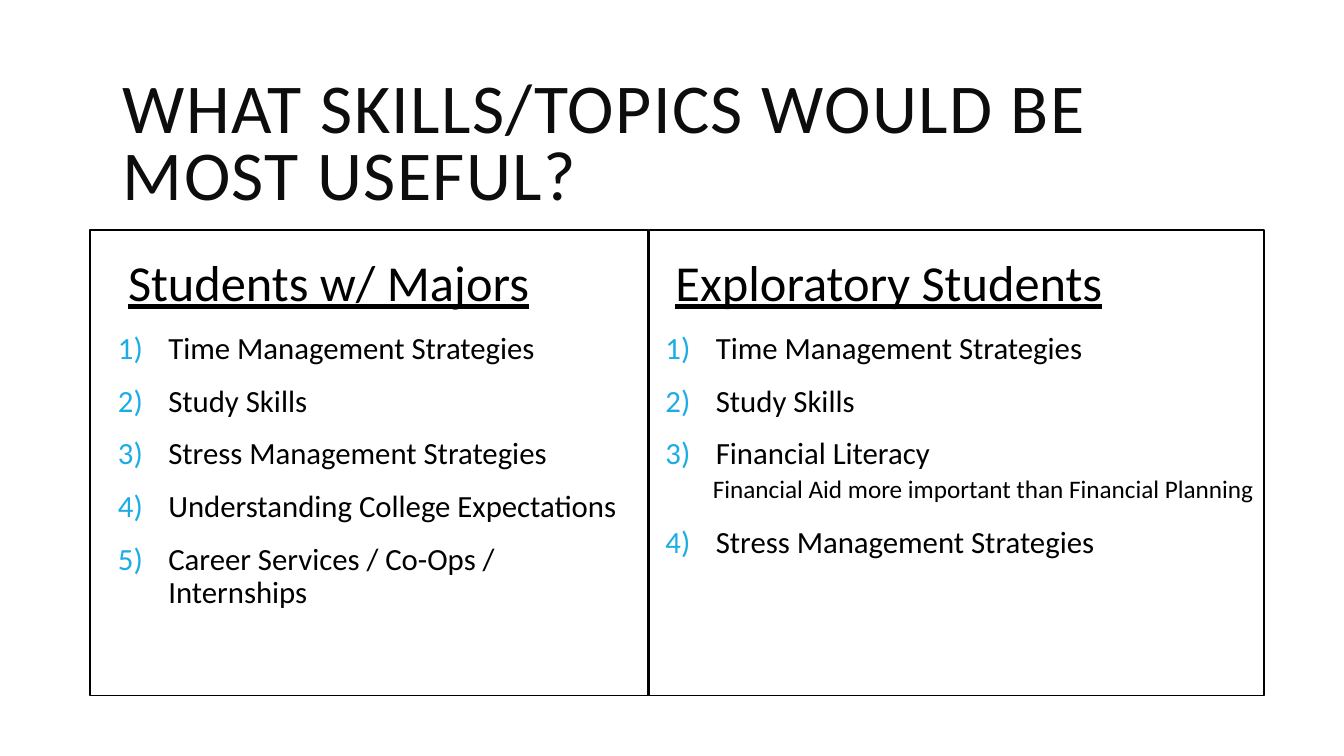
from dataclasses import dataclass

from lxml import etree
from pptx import Presentation
from pptx.dml.color import RGBColor
from pptx.enum.shapes import MSO_SHAPE
from pptx.enum.text import MSO_ANCHOR
from pptx.oxml.ns import qn
from pptx.slide import Slide
from pptx.text.text import TextFrame, _Paragraph
from pptx.util import Inches, Pt

RECTANGLE = MSO_SHAPE.RECTANGLE
MIDDLE = MSO_ANCHOR.MIDDLE
TOP = MSO_ANCHOR.TOP

COLORS = {"title": "0D0D0D", "text": "000000", "number": "1CADE4", "frame": "000000"}
FONT = "Calibri"
BLANK_LAYOUT = 6
FRAME_TOP, FRAME_HEIGHT = 2.28, 4.62
HEADING_TOP, HEADING_WIDTH, HEADING_HEIGHT = 2.38, 5.2, 0.9
LIST_TOP, LIST_HEIGHT = 3.25, 3.65

TITLE_FORMAT = {"line_spacing": 0.8}
HEADING_FORMAT = {"line_spacing": 0.9}
ITEM_FORMAT = {"line_spacing": 0.9, "space_before": Pt(12), "space_after": Pt(2)}
NOTE_FORMAT = {"line_spacing": 0.9, "space_before": Pt(2), "space_after": Pt(4), "level": 1}


@dataclass(frozen=True)
class Item:
    text: str
    is_note: bool = False


@dataclass(frozen=True)
class Column:
    heading: str
    text_left: float
    list_width: float
    frame_left: float
    frame_width: float
    items: tuple[Item, ...]


COLUMNS = (
    Column("Students w/ Majors", 1.12, 5.2, 0.89, 5.54, (
        Item("Time Management Strategies"),
        Item("Study Skills"),
        Item("Stress Management Strategies"),
        Item("Understanding College Expectations"),
        Item("Career Services / Co-Ops / Internships"),
    )),
    Column("Exploratory Students", 6.55, 6.15, 6.44, 6.1, (
        Item("Time Management Strategies"),
        Item("Study Skills"),
        Item("Financial Literacy"),
        Item("Financial Aid more important than Financial Planning", is_note=True),
        Item("Stress Management Strategies"),
    )),
)


def add_text_frame(page: Slide, left: float, top: float, width: float, height: float,
                   anchor: MSO_ANCHOR, side_margin: float) -> TextFrame:
    box = page.shapes.add_textbox(Inches(left), Inches(top), Inches(width), Inches(height))
    frame_format = {
        "word_wrap": True,
        "vertical_anchor": anchor,
        "margin_left": Inches(side_margin),
        "margin_right": Inches(side_margin),
    }
    for name, value in frame_format.items():
        setattr(box.text_frame, name, value)
    return box.text_frame


def write(para: _Paragraph, text: str, size: float, para_format: dict,
          color: str = "text", underline: bool = False, tracking: float = 0) -> None:
    """Fill a paragraph with one formatted span; tracking is in points."""
    for name, value in para_format.items():
        setattr(para, name, value)
    span = para.add_run()
    span.text = text
    span_format = {"name": FONT, "size": Pt(size), "underline": underline}
    for name, value in span_format.items():
        setattr(span.font, name, value)
    span.font.color.rgb = RGBColor.from_string(COLORS[color])
    if tracking:
        span.font._element.set("spc", str(round(tracking * 100)))


def set_indent(para: _Paragraph, left: float, first_line: float) -> None:
    properties = para._p.get_or_add_pPr()
    properties.set("marL", str(Inches(left)))
    properties.set("indent", str(Inches(first_line)))


def add_number(para: _Paragraph) -> None:
    properties = para._p.get_or_add_pPr()
    bullet_color = etree.SubElement(properties, qn("a:buClr"))
    etree.SubElement(bullet_color, qn("a:srgbClr"), val=COLORS["number"])
    etree.SubElement(properties, qn("a:buFont"), typeface="+mj-lt")
    etree.SubElement(properties, qn("a:buAutoNum"), type="arabicParenR")


def add_title(page: Slide) -> None:
    frame = add_text_frame(page, 1.12, 0.64, 10.63, 1.64, MIDDLE, 0.1)
    write(frame.paragraphs[0], "WHAT SKILLS/TOPICS WOULD BE MOST USEFUL?", 50,
          TITLE_FORMAT, color="title", tracking=1)


def add_list(page: Slide, column: Column) -> None:
    frame = add_text_frame(page, column.text_left, LIST_TOP, column.list_width,
                           LIST_HEIGHT, TOP, 0.05)
    for index, item in enumerate(column.items):
        para = frame.add_paragraph() if index else frame.paragraphs[0]
        if item.is_note:
            write(para, item.text, 18, NOTE_FORMAT)
            set_indent(para, 0.47, 0)
        else:
            write(para, item.text, 22, ITEM_FORMAT)
            set_indent(para, 0.5, -0.5)
            add_number(para)


def add_frame(page: Slide, column: Column) -> None:
    frame = page.shapes.add_shape(RECTANGLE, Inches(column.frame_left), Inches(FRAME_TOP),
                                  Inches(column.frame_width), Inches(FRAME_HEIGHT))
    frame.shadow.inherit = False
    frame.fill.background()
    frame.line.color.rgb = RGBColor.from_string(COLORS["frame"])
    frame.line.width = Pt(1.25)


def add_column(page: Slide, column: Column) -> None:
    heading = add_text_frame(page, column.text_left, HEADING_TOP, HEADING_WIDTH,
                             HEADING_HEIGHT, MIDDLE, 0.15)
    write(heading.paragraphs[0], column.heading, 36, HEADING_FORMAT, underline=True)
    add_list(page, column)
    add_frame(page, column)


def main() -> None:
    deck = Presentation()
    deck.slide_width, deck.slide_height = Inches(13.33), Inches(7.5)
    page = deck.slides.add_slide(deck.slide_layouts[BLANK_LAYOUT])
    add_title(page)
    for column in COLUMNS:
        add_column(page, column)
    deck.save("out.pptx")


if __name__ == "__main__":
    main()
